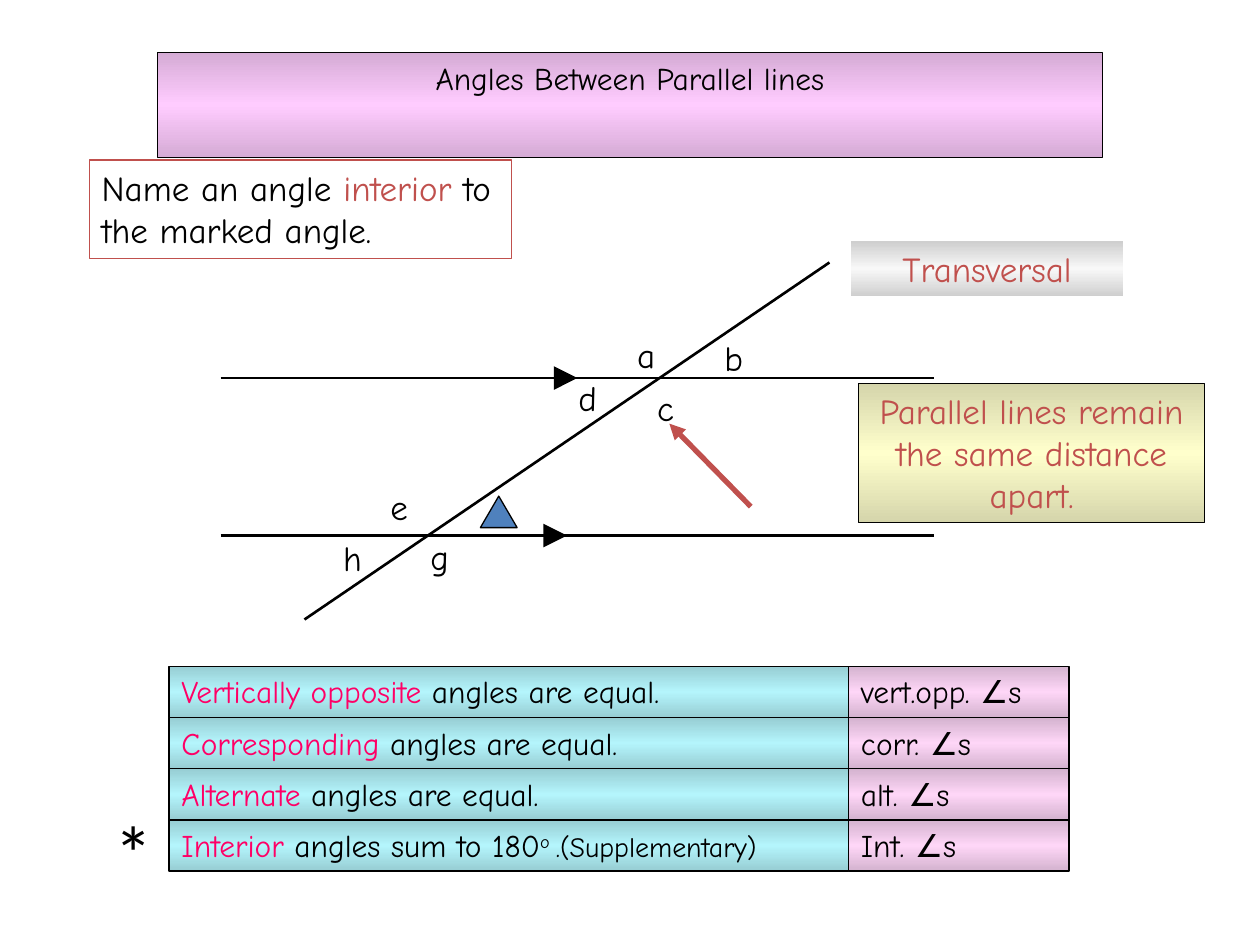
from copy import deepcopy

from pptx import Presentation
from pptx import util as u
from pptx.dml.color import RGBColor
from pptx.enum import shapes, text
from pptx.oxml.ns import qn

BLACK, RED, PINK = "000000", "C0504D", "FF0066"
MAUVE, CREAM, SILVER = ("D5ABD5", "FFCCFF"), ("D5D5AB", "FFFFCC"), ("CFCFCF", "F8F8F8")
AQUA, ROSE = ("97CDD3", "B4F5FC"), ("D4B3CF", "FED6F7")
LEFT, CENTER = text.PP_ALIGN.LEFT, text.PP_ALIGN.CENTER
color = RGBColor.from_string

presentation = Presentation()
presentation.slide_width, presentation.slide_height = u.Inches(10), u.Inches(7.5)
slide = presentation.slides.add_slide(presentation.slide_layouts[5])
unit = presentation.slide_width / 120  # square grid: 120 columns, 90 rows


def write(shape, runs, size=20, align=LEFT, font="Comic Neue"):
    """Fill a shape with runs of (text, colour[, size[, baseline]])."""
    frame = shape.text_frame
    frame.word_wrap = True
    frame.auto_size = text.MSO_AUTO_SIZE.SHAPE_TO_FIT_TEXT
    frame.vertical_anchor = text.MSO_ANCHOR.TOP
    paragraph = frame.paragraphs[0]
    paragraph.alignment = align
    for words, ink, *extra in runs:
        run = paragraph.add_run()
        run.text = words
        run.font.name = font
        run.font.size = u.Pt(extra[0] if extra else size)
        run.font.color.rgb = color(ink)
        if len(extra) > 1:
            run.font._element.set("baseline", str(extra[1]))


def draw_line(*ends, width=1.5, ink=BLACK, arrow=False):
    line = slide.shapes.add_connector(
        shapes.MSO_CONNECTOR.STRAIGHT, *(round(end * unit) for end in ends))
    line.line.width = u.Pt(width)
    line.line.color.rgb = color(ink)
    if arrow:
        outline = line.line._get_or_add_ln()
        outline.makeelement(qn("a:tailEnd"))
        outline.append(outline.makeelement(qn("a:tailEnd"), {"type": "triangle"}))
    properties = line._element.spPr
    properties.append(properties.makeelement(qn("a:effectLst")))


# Parallel lines with direction marks, the transversal and the pointer
for row, mark in ((36, 53), (51, 52)):
    draw_line(21, row, 89, row)
    draw_line(mark, row, mark + 2, row, width=4.5, arrow=True)
draw_line(29, 59, 79, 25)
draw_line(71.5, 48.25, 63.75, 40.35, width=3, ink=RED, arrow=True)

# Boxes: bounds, gradient, outline, runs, size, alignment
boxes = [
    ((15, 5, 90, 6.1), MAUVE, BLACK, [("Angles Between Parallel lines", BLACK)], 18, CENTER),
    ((81.75, 36.5, 33, 13.3), CREAM, BLACK,
     [("Parallel lines remain the same distance apart.", RED)], 20, CENTER),
    ((81, 23, 26, 5.2), SILVER, None, [("Transversal", RED)], 20, CENTER),
    ((8.5, 15.25, 40.2, 9.4), None, RED,
     [("Name an angle ", BLACK), ("interior ", RED), ("to the marked angle.", BLACK)], 20, LEFT),
]
rules = [
    ([("Vertically opposite", PINK), (" angles are equal.", BLACK)], "vert.opp. ∠s"),
    ([("Corresponding", PINK), (" angles are equal.", BLACK)], "corr. ∠s"),
    ([("Alternate ", PINK), ("angles are equal.", BLACK)], "alt. ∠s"),
    ([("Interior ", PINK), ("angles sum to 180", BLACK), ("o ", BLACK, 18, 30000),
      (".(Supplementary)", BLACK, 16)], "Int. ∠s"),
]
for index, (rule, short_form) in enumerate(rules):
    top = 63.45 + 4.88 * index
    boxes.append(((16.1, top, 64.7, 4.88), AQUA, BLACK, rule, 18, LEFT))
    boxes.append(((80.8, top, 21, 4.88), ROSE, BLACK, [(short_form, BLACK)], 18, LEFT))

for index, (bounds, gradient, outline, runs, size, align) in enumerate(boxes):
    left, top, width, height = (round(value * unit) for value in bounds)
    if index == 0:
        shape = slide.shapes.title
        shape.left, shape.top, shape.width, shape.height = left, top, width, height
    else:
        shape = slide.shapes.add_shape(shapes.MSO_SHAPE.RECTANGLE, left, top, width, height)
        shape.shadow.inherit = False
    if gradient:
        shape.fill.gradient()
        shape.fill.gradient_angle = 90
        edge, middle = shape.fill.gradient_stops
        edge.color.rgb, middle.color.rgb = map(color, gradient)
        edge.position, middle.position = 0, 0.5
        stops = shape._element.spPr.find(".//" + qn("a:gsLst"))
        stops.append(deepcopy(stops[0]))
        shape.fill.gradient_stops[2].position = 1
    else:
        shape.fill.background()
    if outline:
        shape.line.color.rgb = color(outline)
        shape.line.width = u.Pt(0.75)
    else:
        shape.line.fill.background()
    write(shape, runs, size=size, align=align)

# Marked angle
triangle = slide.shapes.add_shape(
    shapes.MSO_SHAPE.ISOSCELES_TRIANGLE,
    *(round(value * unit) for value in (45.75, 47.25, 3.5, 3)))
triangle.shadow.inherit = False
triangle.fill.solid()
triangle.fill.fore_color.rgb = color("4F81BD")
triangle.line.color.rgb = color(BLACK)
triangle.line.width = u.Pt(0.75)

# Angle letters and the star beside the rule in use
labels = [("a", 59.5, 31.2), ("b", 67.8, 31.5), ("e", 36, 45.6), ("h", 31.5, 50.5),
          ("g", 39.8, 50.4), ("d", 53.9, 35.3), ("c", 61.4, 36.2)]
for letter, column, row in labels:
    label = slide.shapes.add_textbox(
        *(round(value * unit) for value in (column, row, 5.2, 5.2)))
    write(label, [(letter, BLACK)])
star = slide.shapes.add_textbox(*(round(value * unit) for value in (8.6, 76, 8.2, 10)))
write(star, [("*", BLACK)], size=44, align=CENTER, font="Calibri")

presentation.save("out.pptx")
